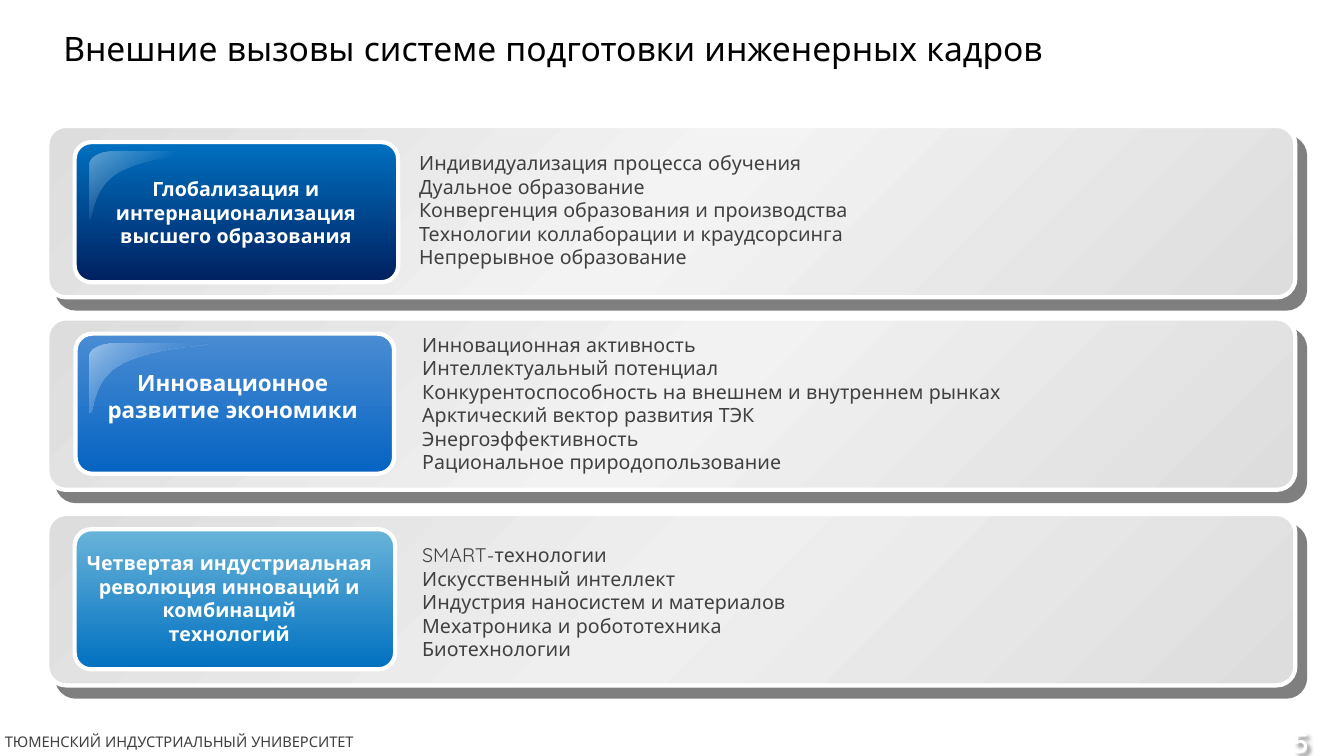
from dataclasses import dataclass

import lxml.etree
import pptx
import pptx.dml.color
import pptx.enum.shapes
import pptx.enum.text
import pptx.oxml
import pptx.oxml.ns
import pptx.util

SHAPE = pptx.enum.shapes.MSO_SHAPE
ALIGN = pptx.enum.text.PP_ALIGN
ANCHOR = pptx.enum.text.MSO_ANCHOR
CELL = 0.1  # grid step in inches: 133.33 columns by 75 rows
COLS, ROWS = 133.33, 75


@dataclass(frozen=True)
class Theme:
    font: str = "Quicksand"
    title: str = "000000"
    body: str = "404040"
    white: str = "FFFFFF"
    panel_edge: str = "DDDDDD"
    shadow: str = "000000"
    title_size: float = 24
    body_size: float = 14
    lead_size: float = 16
    footer_size: float = 10.5
    number_size: float = 20
    border: float = 3


T = Theme()
WHITE_GLOSS = ((0, T.white, 37), (48, T.white, 0))
BLUE_GLOSS = ((0, "9CC3EB", 100), (100, "0563C1", 0))


@dataclass(frozen=True)
class Card:
    """Boxes are (left, top, width, height) in cells, tops counted from the card's top."""
    top: float
    middle: str
    tag_colors: tuple
    tag_box: tuple
    caption: tuple
    caption_box: tuple
    items: tuple
    items_box: tuple
    caption_size: float = T.body_size
    gloss: tuple = ()


CARDS = (
    Card(12.5, "F3F3F3", ("0070C0", "002060"), (7.4, 1.6, 32.1, 13.9),
         ("Глобализация и интернационализация высшего образования",), (7.7, 4.6, 31.4, 8.1),
         ("Индивидуализация процесса обучения", "Дуальное образование",
          "Конвергенция образования и производства",
          "Технологии коллаборации и краудсорсинга", "Непрерывное образование"),
         (40.6, 2, 86.8, 12.8), gloss=WHITE_GLOSS),
    Card(31.6, "F2F2F2", ("4A8CD4", "0563C1"), (7.5, 1.5, 31.6, 13.9),
         ("Инновационное развитие экономики",), (8.8, 4.5, 28.6, 6.4),
         ("Инновационная активность", "Интеллектуальный потенциал",
          "Конкурентоспособность на внешнем и внутреннем рынках",
          "Арктический вектор развития ТЭК", "Энергоэффективность",
          "Рациональное природопользование"),
         (40.9, 0.9, 85, 15.1), caption_size=T.lead_size, gloss=BLUE_GLOSS),
    Card(51, "EFEFEF", ("69B4D9", "0070C0"), (7.4, 1.5, 31.8, 13.9),
         ("Четвертая индустриальная революция инноваций и комбинаций", "технологий"),
         (7.4, 3.2, 30.7, 10.4),
         ("SMART-технологии", "Искусственный интеллект", "Индустрия наносистем и материалов",
          "Мехатроника и робототехника", "Биотехнологии"),
         (40.9, 2.4, 85, 12.8)),
)


def cells(*values):
    return [pptx.util.Inches(v * CELL) for v in values]


def rgb(color):
    return pptx.dml.color.RGBColor.from_string(color)


def add_xml(parent, xml):
    ns = pptx.oxml.ns.nsdecls("a")
    el = pptx.oxml.parse_xml(xml.replace(">", f" {ns}>", 1))
    parent.append(el)
    return el


def cast_shadow(sp, blur, dist, angle, alpha):
    """Shadow with blur and distance in points; an unfilled shape casts that of its text."""
    sp.shadow.inherit = False
    effects = sp._element.spPr.find(pptx.oxml.ns.qn("a:effectLst"))
    add_xml(effects, f'<a:outerShdw blurRad="{pptx.util.Pt(blur)}" dist="{pptx.util.Pt(dist)}" '
                     f'dir="{angle * 60000}" algn="ctr" rotWithShape="0">'
                     f'<a:srgbClr val="{T.shadow}"><a:alpha val="{alpha * 1000}"/></a:srgbClr>'
                     f'</a:outerShdw>')


def gradient(sp, stops, angle):
    """Fill with (position %, colour, opacity %) stops, the angle running clockwise."""
    sp.fill.gradient()
    grad = sp._element.spPr.find(pptx.oxml.ns.qn("a:gradFill"))
    for child in list(grad):
        grad.remove(child)
    gs_list = add_xml(grad, "<a:gsLst></a:gsLst>")
    for pos, color, alpha in stops:
        add_xml(gs_list, f'<a:gs pos="{pos * 1000}"><a:srgbClr val="{color}">'
                         f'<a:alpha val="{alpha * 1000}"/></a:srgbClr></a:gs>')
    lxml.etree.SubElement(grad, pptx.oxml.ns.qn("a:lin"), ang=str(angle * 60000), scaled="0")


def add_text(tf, lines, size, color, bold=False, align=ALIGN.LEFT, spacing=None):
    for i, line in enumerate(lines):
        p = tf.paragraphs[0] if i == 0 else tf.add_paragraph()
        p.alignment = align
        if spacing:
            p.line_spacing = spacing
        r = p.add_run()
        r.text = line
        r.font.name, r.font.size, r.font.bold = T.font, pptx.util.Pt(size), bold
        r.font.color.rgb = rgb(color)


def text_box(shapes, box, lines, size, color, anchor=ANCHOR.TOP, **style):
    tf = shapes.add_textbox(*cells(*box)).text_frame
    tf.word_wrap = True
    tf.vertical_anchor = anchor
    add_text(tf, lines, size, color, **style)


def rounded_box(shapes, box, radius, stops, angle):
    sp = shapes.add_shape(SHAPE.ROUNDED_RECTANGLE, *cells(*box))
    sp.adjustments[0] = radius
    sp.shadow.inherit = False
    gradient(sp, stops, angle)
    sp.line.color.rgb = rgb(T.white)
    sp.line.width = pptx.util.Pt(T.border)
    return sp


def bezier(a, b, c, d, steps=16):
    for i in range(1, steps + 1):
        t = i / steps
        u = 1 - t
        yield tuple(u**3 * a[k] + 3 * u * u * t * b[k] + 3 * u * t * t * c[k] + t**3 * d[k]
                    for k in (0, 1))


def gloss_mark(shapes, left, top, stops):
    """Curved highlight in the upper left corner of a tag."""
    start, side, foot = (2.3, 0), (0, 1.3), (0, 6.8)
    bend, tip = (3.2, 2), (11.7, 0)
    points = [*bezier(start, (1, 0), (0, 0.6), side), foot,
              *bezier(foot, (0.5, 6.9), (0.2, 3.5), bend),
              *bezier(bend, (6.2, 0.4), (11.9, 0.3), tip)]
    points = [cells(left + x, top + y) for x, y in points]
    builder = shapes.build_freeform(*cells(left + start[0], top + start[1]))
    builder.add_line_segments(points, close=True)
    sp = builder.convert_to_shape()
    sp.shadow.inherit = False
    gradient(sp, stops, 45)
    sp.line.fill.background()


def add_card(slide, card):
    shapes = slide.shapes.add_group_shape().shapes

    def placed(box):
        return box[0], card.top + box[1], box[2], box[3]

    edge = T.panel_edge
    panel = rounded_box(shapes, placed((4.7, 0, 123.8, 17)), 0.109,
                        ((0, edge, 100), (50, card.middle, 100), (100, edge, 100)), 45)
    cast_shadow(panel, 0, 10.6, 49, 50)
    first, last = card.tag_colors
    rounded_box(shapes, placed(card.tag_box), 0.119, ((0, first, 100), (100, last, 100)), 90)
    if card.gloss:
        gloss_mark(shapes, 8.9, card.top + 2.5, card.gloss)
    text_box(shapes, placed(card.caption_box), card.caption, card.caption_size, T.white,
             bold=True, align=ALIGN.CENTER)
    text_box(shapes, placed(card.items_box), card.items, T.body_size, T.body)


def add_page_number(slide, number):
    sp = slide.shapes.add_shape(SHAPE.OVAL, *cells(124.8, 70.5, 8.6, 6.2))
    sp.fill.background()
    sp.line.fill.background()
    cast_shadow(sp, 3, 3, 45, 45)
    add_text(sp.text_frame, (number,), T.number_size, T.white, bold=True, align=ALIGN.CENTER)


def main():
    prs = pptx.Presentation()
    prs.slide_width, prs.slide_height = cells(COLS, ROWS)
    slide = prs.slides.add_slide(prs.slide_layouts[6])
    text_box(slide.shapes, (-4.6, 72.2, 44.8, 2.8), ("ТЮМЕНСКИЙ ИНДУСТРИАЛЬНЫЙ УНИВЕРСИТЕТ",),
             T.footer_size, T.body, align=ALIGN.CENTER)
    text_box(slide.shapes, (5.3, 0, 122.3, 10.1),
             ("Внешние вызовы системе подготовки инженерных кадров",),
             T.title_size, T.title, anchor=ANCHOR.MIDDLE, spacing=0.9)
    for card in CARDS:
        add_card(slide, card)
    add_page_number(slide, "5")
    prs.save("out.pptx")


if __name__ == "__main__":
    main()
